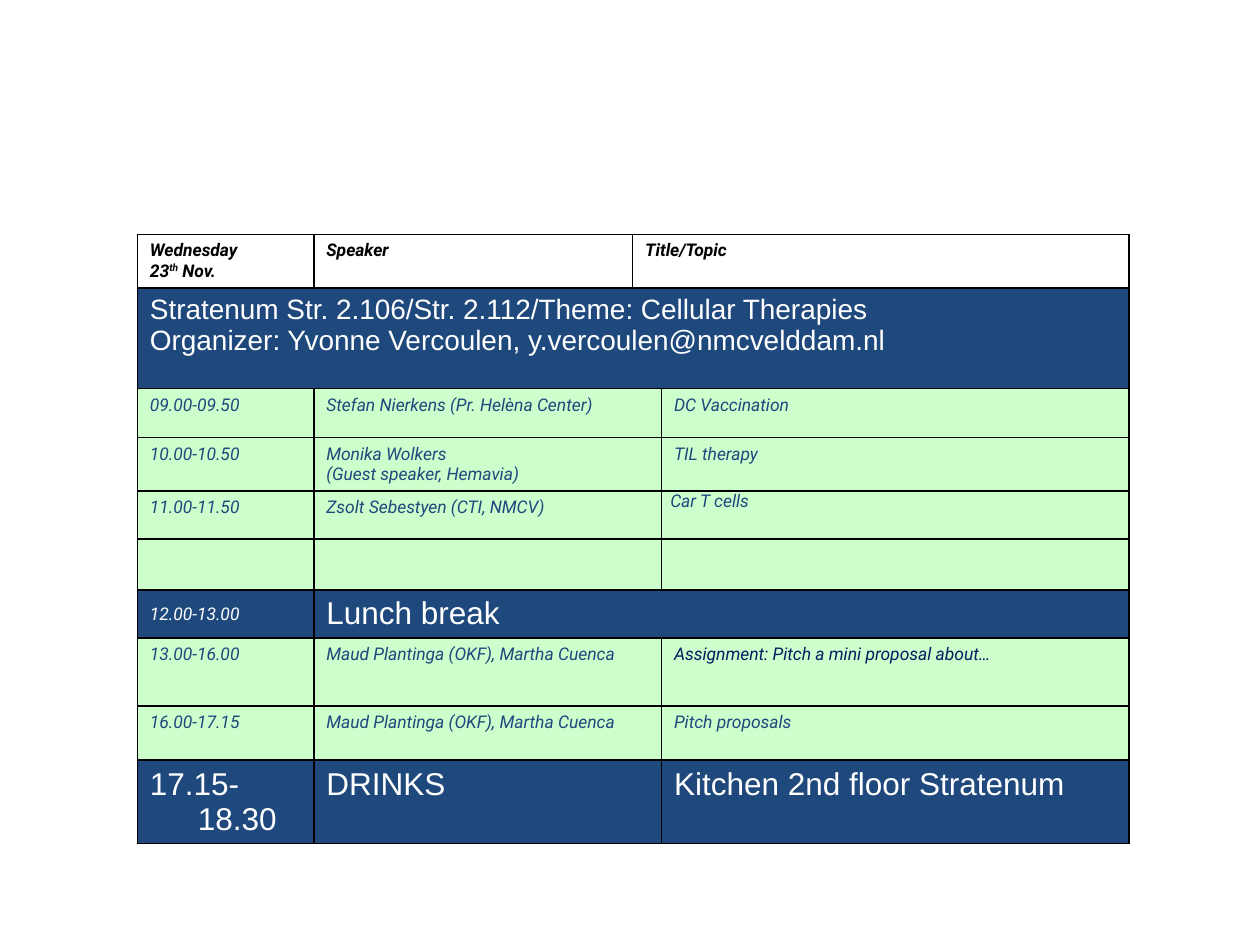
import pptx
import pptx.dml.color
import pptx.enum.text
import pptx.oxml
import pptx.oxml.ns
import pptx.util
from pptx.util import Inches

NAVY, GREEN, WHITE, BLACK, DARK = "1F497D", "CCFFCC", "FFFFFF", "000000", "002060"
COLUMNS = [1.4, 2.53, 0.23, 3.71]
HANGING = 0.38

# Row height, then cells as (first column, last column, text)
HEADER = (0.42, [(0, 0, "Wednesday\n23th Nov."), (1, 1, "Speaker"), (2, 3, "Title/Topic")])
THEME = (0.8, [(0, 3, "Stratenum Str. 2.106/Str. 2.112/Theme: Cellular Therapies\n"
                      "Organizer: Yvonne Vercoulen, y.vercoulen@nmcvelddam.nl")])
LUNCH = (0.38, [(0, 0, "12.00-13.00"), (1, 3, "Lunch break")])
DRINKS = (0.66, [(0, 0, "17.15-18.30"), (1, 2, "DRINKS"), (3, 3, "Kitchen 2nd floor Stratenum")])


def session(height, time="", speaker="", topic=""):
    return height, [(0, 0, time), (1, 2, speaker), (3, 3, topic)]


PITCH_LEADERS = "Maud Plantinga (OKF), Martha Cuenca"
MORNING = [
    session(0.39, "09.00-09.50", "Stefan Nierkens (Pr. Helèna Center)", "DC Vaccination"),
    session(0.42, "10.00-10.50", "Monika Wolkers\n(Guest speaker, Hemavia)", "TIL therapy"),
    session(0.38, "11.00-11.50", "Zsolt Sebestyen (CTI, NMCV)", "Car T cells"),
    session(0.39),
]
AFTERNOON = [
    session(0.54, "13.00-16.00", PITCH_LEADERS, "Assignment: Pitch a mini proposal about…"),
    session(0.43, "16.00-17.15", PITCH_LEADERS, "Pitch proposals"),
]


def rgb(value):
    return pptx.dml.color.RGBColor.from_string(value)


class ProgrammeSlide:
    """Holds the deck, the current slide and the text styles (font, size, colour, bold, italic)."""

    heading = ("Roboto", 10, BLACK, True, True)
    detail = ("Roboto", 10, NAVY, False, True)
    assignment = ("Roboto", 10, DARK, False, True)
    lunch_time = ("Roboto", 10, WHITE, False, True)
    theme = ("Arial", 16, WHITE, False, False)
    banner = ("Arial", 18, WHITE, False, False)

    def __init__(self):
        self.deck = pptx.Presentation()
        self.deck.slide_width, self.deck.slide_height = Inches(10), Inches(7.5)
        self.slide = self.deck.slides.add_slide(self.deck.slide_layouts[6])

    def table(self, left, top, widths, heights):
        frame = self.slide.shapes.add_table(
            len(heights), len(widths), Inches(left), Inches(top),
            Inches(sum(widths)), Inches(sum(heights)))
        table = frame.table
        table.first_row = table.horz_banding = False
        for column, width in zip(table.columns, widths):
            column.width = Inches(width)
        for row, height in zip(table.rows, heights):
            row.height = Inches(height)
        return table

    def cell_look(self, cell, fill):
        properties = cell._tc.get_or_add_tcPr()
        for side in "LRTB":
            properties.append(pptx.oxml.parse_xml(
                f'<a:ln{side} {pptx.oxml.ns.nsdecls("a")} w="12700"><a:solidFill>'
                f'<a:srgbClr val="{BLACK}"/></a:solidFill></a:ln{side}>'))
        if fill:
            cell.fill.solid()
            cell.fill.fore_color.rgb = rgb(fill)
        else:
            cell.fill.background()

    def cell_text(self, cell, text, style, hanging):
        cell.text_frame.text = text
        for para in cell.text_frame.paragraphs:
            if hanging:
                properties = para._p.get_or_add_pPr()
                properties.set("marL", str(Inches(HANGING)))
                properties.set("indent", str(-Inches(HANGING)))
            for span in para.runs:
                self.format(span, style)

    def format(self, span, style):
        font = span.font
        font.name, size, color, font.bold, font.italic = style
        font.size = pptx.util.Pt(size)
        font.color.rgb = rgb(color)

    def superscript_date(self, para, style):
        """Splits the ordinal ending out of the date and raises it."""
        para.text = ""
        for text, baseline in (("23", 0), ("th", 30000), (" Nov.", 0)):
            span = para.add_run()
            span.text = text
            self.format(span, style)
            if baseline:
                span._r.get_or_add_rPr().set("baseline", str(baseline))

    def programme(self, left, top, rows):
        """Fills a table from rows of (height, cells), fill colour and text style."""
        table = self.table(left, top, COLUMNS, [height for (height, _), _, _ in rows])
        for row, ((_, cells), fill, style) in enumerate(rows):
            for column in range(len(COLUMNS)):
                self.cell_look(table.cell(row, column), fill)
            for first, last, text in cells:
                cell = table.cell(row, first)
                if last > first:
                    cell.merge(table.cell(row, last))
                self.cell_text(cell, text, style, hanging=first == 0 and style != self.theme)
        return table


def main():
    page = ProgrammeSlide()
    rows = [(HEADER, None, page.heading), (THEME, NAVY, page.theme)]
    rows += [(row, GREEN, page.detail) for row in MORNING]
    rows.append((LUNCH, NAVY, page.banner))
    rows += [(row, GREEN, page.detail) for row in AFTERNOON]
    rows.append((DRINKS, NAVY, page.banner))
    table = page.programme(1.09, 1.86, rows)

    page.superscript_date(table.cell(0, 0).text_frame.paragraphs[1], page.heading)

    car_t = table.cell(4, 3)
    car_t.margin_left = car_t.margin_right = Inches(0.07)
    car_t.margin_top = car_t.margin_bottom = 0

    for column in (0, 1):
        table.cell(6, column).vertical_anchor = pptx.enum.text.MSO_ANCHOR.MIDDLE
    page.format(table.cell(6, 0).text_frame.paragraphs[0].runs[0], page.lunch_time)
    page.format(table.cell(7, 3).text_frame.paragraphs[0].runs[0], page.assignment)

    page.deck.save("out.pptx")


if __name__ == "__main__":
    main()
